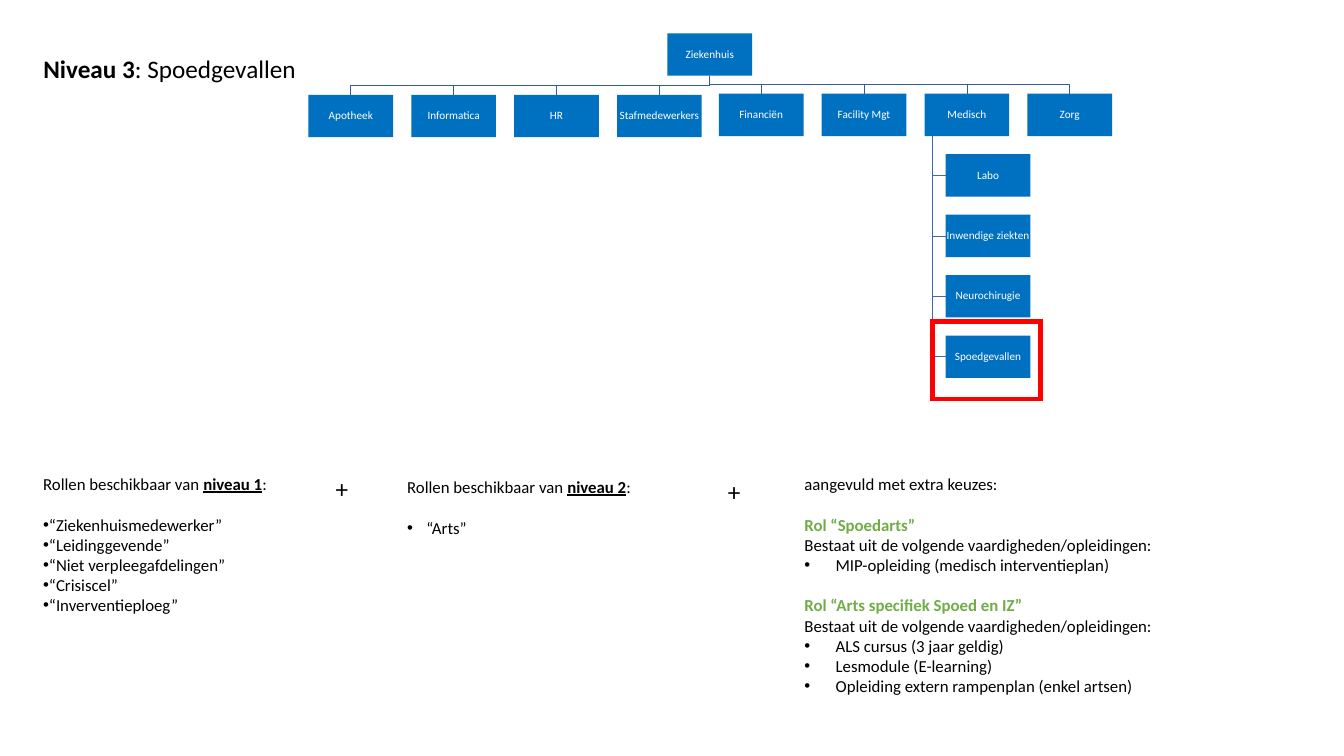
from dataclasses import dataclass

from lxml import etree
from pptx import Presentation
from pptx.dml.color import RGBColor
from pptx.enum.shapes import MSO_SHAPE
from pptx.enum.text import MSO_ANCHOR, MSO_AUTO_SIZE, PP_ALIGN
from pptx.oxml.ns import qn
from pptx.util import Inches, Pt

RECTANGLE = MSO_SHAPE.RECTANGLE
TOP, MIDDLE = MSO_ANCHOR.TOP, MSO_ANCHOR.MIDDLE
LEFT, CENTER = PP_ALIGN.LEFT, PP_ALIGN.CENTER
NO_AUTOFIT = MSO_AUTO_SIZE.NONE

BLACK = RGBColor(0x00, 0x00, 0x00)
WHITE = RGBColor(0xFF, 0xFF, 0xFF)
NODE_BLUE = RGBColor(0x00, 0x70, 0xC0)
TOP_LINE = RGBColor(0x36, 0x5B, 0x9D)
SUB_LINE = RGBColor(0x3E, 0x67, 0xB2)
RED = RGBColor(0xFF, 0x00, 0x00)
GREEN = RGBColor(0x70, 0xAD, 0x47)

BODY = {"name": "Calibri", "size": Pt(12), "bold": False}
HEADING = {"name": "Calibri", "size": Pt(18), "bold": False}
NODE_FONT = {"name": "Calibri", "size": Pt(8), "bold": False}
STRESSED = {"bold": True, "underline": True}
BOLD = {"bold": True}

NODE_W, NODE_H = 0.84, 0.42
DEPARTMENT_STEP, WARD_STEP = 1.02, 0.6
LINE_GAP = Pt(14.6)


@dataclass
class Node:
    label: str
    left: float
    top: float

    @property
    def center(self) -> float:
        return self.left + NODE_W / 2


@dataclass
class Run:
    text: str
    style: dict
    color: RGBColor = BLACK


@dataclass
class Line:
    runs: list[Run]
    gap: bool = False
    bullet: tuple[float, float] | None = None  # margin and first-line indent


@dataclass
class Block:
    left: float
    top: float
    width: float
    height: float
    lines: list[Line]


def set_all(target, values: dict) -> None:
    for attribute, value in values.items():
        setattr(target, attribute, value)


def write_runs(paragraph, runs: list[Run], base: dict) -> None:
    for item in runs:
        run = paragraph.add_run()
        run.text = item.text
        set_all(run.font, base | item.style)
        run.font.color.rgb = item.color


def add_bullet(paragraph, margin: float, indent: float) -> None:
    properties = paragraph._p.get_or_add_pPr()
    properties.set("marL", str(Inches(margin)))
    properties.set("indent", str(Inches(indent)))
    etree.SubElement(properties, qn("a:buFont")).set("typeface", "Arial")
    etree.SubElement(properties, qn("a:buChar")).set("char", "•")


def draw_branch(shapes, points: list[tuple[float, float]], color: RGBColor) -> None:
    corners = [(Inches(x), Inches(y)) for x, y in points]
    builder = shapes.build_freeform(*corners[0])
    builder.add_line_segments(corners[1:], close=False)
    branch = builder.convert_to_shape()
    branch.fill.background()
    branch.line.color.rgb = color
    branch.line.width = Pt(0.5)
    branch.shadow.inherit = False


def draw_node(shapes, node: Node) -> None:
    box = shapes.add_shape(RECTANGLE, Inches(node.left), Inches(node.top),
                           Inches(NODE_W), Inches(NODE_H))
    box.shadow.inherit = False
    box.fill.solid()
    box.fill.fore_color.rgb = NODE_BLUE
    box.line.fill.background()
    set_all(box.text_frame, {"margin_left": 0, "margin_right": 0,
                             "margin_top": Inches(0.01), "margin_bottom": Inches(0.01),
                             "vertical_anchor": MIDDLE, "word_wrap": False})
    paragraph = box.text_frame.paragraphs[0]
    set_all(paragraph, {"alignment": CENTER, "line_spacing": 0.9})
    write_runs(paragraph, [Run(node.label, {}, WHITE)], NODE_FONT)


def draw_block(shapes, block: Block, base: dict) -> None:
    box = shapes.add_textbox(Inches(block.left), Inches(block.top),
                             Inches(block.width), Inches(block.height))
    frame = box.text_frame
    frame.word_wrap = True
    for index, line in enumerate(block.lines):
        paragraph = frame.add_paragraph() if index else frame.paragraphs[0]
        if line.gap:
            paragraph.space_before = LINE_GAP
        if line.bullet:
            add_bullet(paragraph, *line.bullet)
        write_runs(paragraph, line.runs, base)


def plain(text: str, gap: bool = False, bullet: tuple[float, float] | None = None) -> Line:
    return Line([Run(text, {})], gap, bullet)


def level_heading(level: str) -> Line:
    return Line([Run("Rollen beschikbaar van ", {}), Run(level, STRESSED), Run(":", {})])


def role(name: str, trainings: list[str]) -> list[Line]:
    return [Line([Run(name, BOLD, GREEN)], gap=True),
            plain("Bestaat uit de volgende vaardigheden/opleidingen:"),
            *(plain(training, bullet=(0.31, -0.31)) for training in trainings)]


# Content
hospital = Node("Ziekenhuis", 6.62, 0.33)
staff_side = [Node(label, 3.06 + i * DEPARTMENT_STEP, 0.94) for i, label in
              enumerate(["Apotheek", "Informatica", "HR", "Stafmedewerkers"])]
care_side = [Node(label, 7.13 + i * DEPARTMENT_STEP, 0.93) for i, label in
             enumerate(["Financiën", "Facility Mgt", "Medisch", "Zorg"])]
departments = staff_side + care_side
wards = [Node(label, 9.38, 1.53 + i * WARD_STEP) for i, label in
         enumerate(["Labo", "Inwendige ziekten", "Neurochirugie", "Spoedgevallen"])]

level_1_roles = ["“Ziekenhuismedewerker”", "“Leidinggevende”",
                 "“Niet verpleegafdelingen”", "“Crisiscel”", "“Inverventieploeg”"]
role_blocks = [
    Block(0.33, 4.65, 2.47, 1.52, [
        level_heading("niveau 1"),
        *(plain(name, gap=i == 0, bullet=(0, -0.31)) for i, name in enumerate(level_1_roles))]),
    Block(3.94, 4.68, 2.45, 1.01, [
        level_heading("niveau 2"), plain("“Arts”", gap=True, bullet=(0.19, -0.19))]),
    Block(7.88, 4.65, 3.68, 2.52, [
        plain("aangevuld met extra keuzes:"),
        *role("Rol “Spoedarts”", ["MIP-opleiding (medisch interventieplan)"]),
        *role("Rol “Arts specifiek Spoed en IZ”", [
            "ALS cursus (3 jaar geldig)", "Lesmodule (E-learning)",
            "Opleiding extern rampenplan (enkel artsen)"])]),
]
plus_signs = [Block(left, top, 0.33, 0.4, [plain("+")])
              for left, top in [(3.23, 4.65), (7.12, 4.68)]]


def main() -> None:
    deck = Presentation()
    set_all(deck, {"slide_width": Inches(13.33), "slide_height": Inches(7.5)})
    slide = deck.slides.add_slide(deck.slide_layouts[5])
    shapes = slide.shapes

    # Title
    title = shapes.title
    set_all(title, {"left": Inches(0.33), "top": Inches(0.48),
                    "width": Inches(4.06), "height": Inches(0.4)})
    set_all(title.text_frame, {"vertical_anchor": TOP, "word_wrap": True,
                               "auto_size": NO_AUTOFIT})
    heading = title.text_frame.paragraphs[0]
    set_all(heading, {"alignment": LEFT, "line_spacing": 1.0})
    write_runs(heading, [Run("Niveau 3", BOLD), Run(": Spoedgevallen", {})], HEADING)

    # Organisation chart: branches behind the nodes
    trunk, trunk_top = hospital.center, hospital.top + NODE_H
    for department in departments:
        bend = department.top - 0.09
        draw_branch(shapes, [(trunk, trunk_top), (trunk, bend), (department.center, bend),
                             (department.center, department.top)], TOP_LINE)
    for ward in wards:
        middle = ward.top + NODE_H / 2
        draw_branch(shapes, [(9.25, 1.35), (9.25, middle), (ward.left, middle)], SUB_LINE)
    for node in [hospital, *departments, *wards]:
        draw_node(shapes, node)

    # Red frame around the emergency ward, with square corners
    frame = shapes.add_shape(RECTANGLE, Inches(9.25), Inches(3.19), Inches(1.07), Inches(0.77))
    frame.shadow.inherit = False
    frame.fill.background()
    frame.line.color.rgb = RED
    frame.line.width = Pt(3)
    outline = frame._element.spPr.find(qn("a:ln"))
    etree.SubElement(outline, qn("a:miter")).set("lim", "800000")

    # Roles per level
    for block in role_blocks:
        draw_block(shapes, block, BODY)
    for plus in plus_signs:
        draw_block(shapes, plus, HEADING)

    deck.save("out.pptx")


if __name__ == "__main__":
    main()
